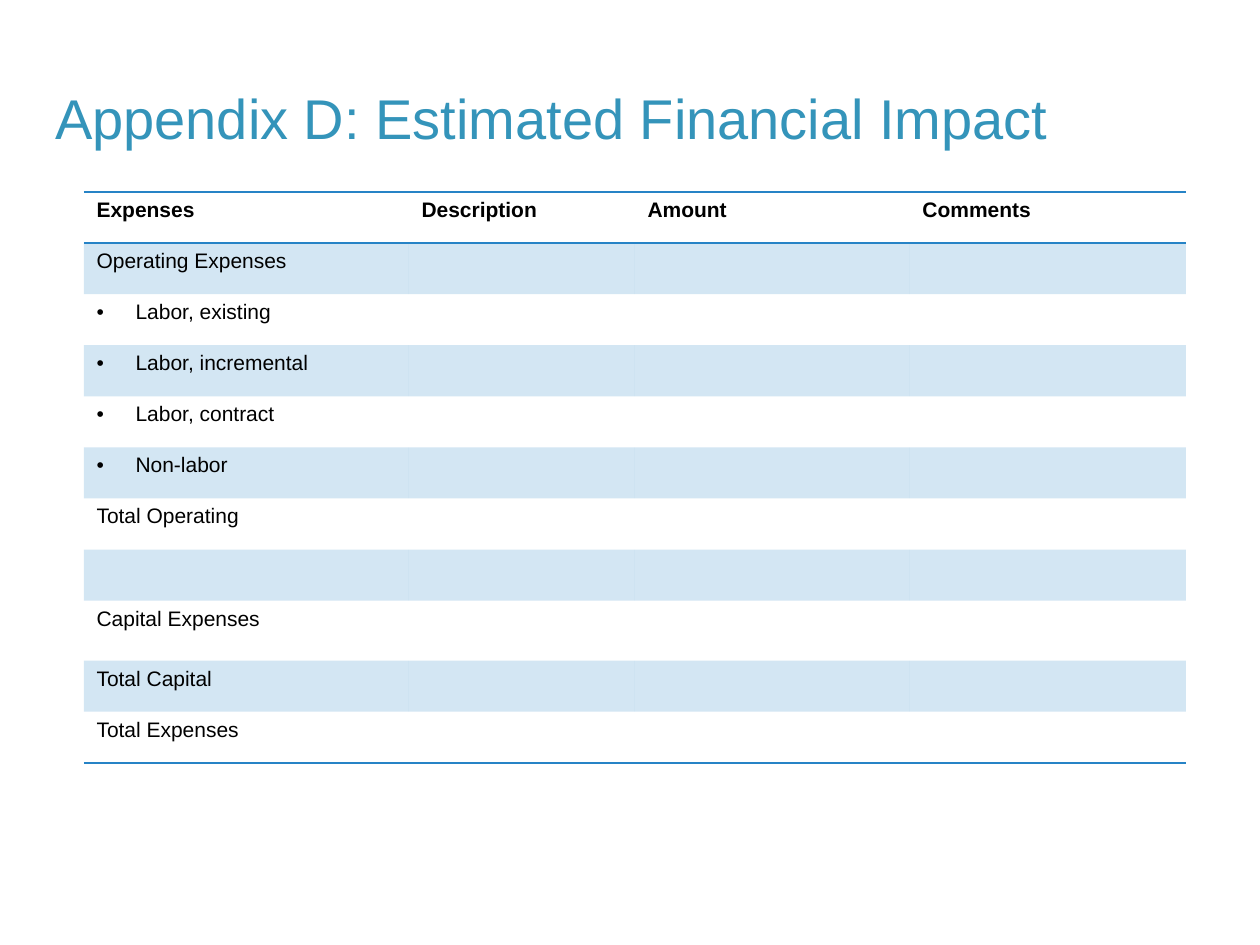
"""Builds the appendix slide with the table of estimated financial impact."""
from lxml import etree
from pptx import Presentation
from pptx.dml.color import RGBColor
from pptx.enum.text import MSO_ANCHOR, MSO_AUTO_SIZE, PP_ALIGN
from pptx.oxml.ns import qn
from pptx.util import Inches, Pt

LEFT = PP_ALIGN.LEFT
MIDDLE = MSO_ANCHOR.MIDDLE
NO_FIT = MSO_AUTO_SIZE.NONE

TEAL = RGBColor(0x34, 0x94, 0xBA)
BLUE = RGBColor(0x26, 0x83, 0xC6)
BLACK = RGBColor(0, 0, 0)

TITLE = "Appendix D: Estimated Financial Impact"
HEADERS = ["Expenses", "Description", "Amount", "Comments"]
EXPENSES = [
    ("Operating Expenses", False),
    ("Labor, existing", True),
    ("Labor, incremental", True),
    ("Labor, contract", True),
    ("Non-labor", True),
    ("Total Operating", False),
    ("", False),
    ("Capital Expenses", False),
    ("Total Capital", False),
    ("Total Expenses", False),
]

SCALE = Inches(1) / 126
TITLE_BOX = (55, 38, 1163, 158)
TABLE_LEFT, TABLE_TOP = 84, 192
COLUMN_WIDTHS = [325, 226, 275, 276]
ROW_HEIGHTS = [51] * 8 + [60] + [51] * 2
BULLET_INDENT = 39
PLAIN_STYLE = "{2D5ABB26-0587-4C30-8999-92F81FD0307C}"

TITLE_FONT = {"name": "Arial", "size": Pt(32), "bold": False}
BODY_FONT = {"name": "Arial", "size": Pt(12), "bold": False}
HEADER_FONT = {**BODY_FONT, "bold": True}
TITLE_FRAME = {
    "auto_size": NO_FIT, "word_wrap": True, "vertical_anchor": MIDDLE,
    "margin_left": 0, "margin_top": 0, "margin_right": 0, "margin_bottom": 0,
}


def px(length):
    return round(length * SCALE)


def apply(target, values):
    for name, value in values.items():
        setattr(target, name, value)


def write(para, text, font, color):
    span = para.add_run()
    span.text = text
    apply(span.font, font)
    span.font.color.rgb = color


def add_bullet(para):
    properties = para._p.get_or_add_pPr()
    properties.set("marL", str(px(BULLET_INDENT)))
    properties.set("indent", str(-px(BULLET_INDENT)))
    etree.SubElement(properties, qn("a:buFont"), typeface="Arial")
    etree.SubElement(properties, qn("a:buChar"), char="•")


def tint(cell):
    cell.fill.solid()
    cell.fill.fore_color.rgb = BLUE
    color = cell._tc.tcPr.find(".//" + qn("a:srgbClr"))
    etree.SubElement(color, qn("a:alpha"), val="20000")


def add_borders(cell, sides):
    properties = cell._tc.get_or_add_tcPr()
    for position, side in enumerate(sides):
        line = etree.Element(qn(f"a:ln{side}"), w=str(Pt(1)))
        fill = etree.SubElement(line, qn("a:solidFill"))
        etree.SubElement(fill, qn("a:srgbClr"), val=str(BLUE))
        properties.insert(position, line)


def add_title(page):
    title = page.shapes.title
    apply(title, dict(zip(("left", "top", "width", "height"), map(px, TITLE_BOX))))
    apply(title.text_frame, TITLE_FRAME)
    para = title.text_frame.paragraphs[0]
    para.alignment = LEFT
    write(para, TITLE, TITLE_FONT, TEAL)


def add_expense_table(page):
    rows = [[(header, False) for header in HEADERS]]
    rows += [[expense] + [("", False)] * (len(HEADERS) - 1) for expense in EXPENSES]
    frame = page.shapes.add_table(
        len(rows), len(HEADERS), px(TABLE_LEFT), px(TABLE_TOP),
        px(sum(COLUMN_WIDTHS)), px(sum(ROW_HEIGHTS)))
    table = frame.table
    table._tbl.tblPr.find(qn("a:tableStyleId")).text = PLAIN_STYLE
    apply(table, {"first_row": False, "horz_banding": False})
    for column, width in zip(table.columns, COLUMN_WIDTHS):
        column.width = px(width)
    for row, height in zip(table.rows, ROW_HEIGHTS):
        row.height = px(height)

    borders = {0: "TB", len(rows) - 1: "B"}
    for row_index, row in enumerate(rows):
        for column_index, (text, bulleted) in enumerate(row):
            cell = table.cell(row_index, column_index)
            if row_index % 2:
                tint(cell)
            else:
                cell.fill.background()
            add_borders(cell, borders.get(row_index, ""))
            para = cell.text_frame.paragraphs[0]
            if bulleted:
                add_bullet(para)
            if text:
                write(para, text, BODY_FONT if row_index else HEADER_FONT, BLACK)


def main():
    deck = Presentation()
    deck.slide_width, deck.slide_height = Inches(10), Inches(7.5)
    page = deck.slides.add_slide(deck.slide_layouts[5])
    add_title(page)
    add_expense_table(page)
    deck.save("out.pptx")


if __name__ == "__main__":
    main()
